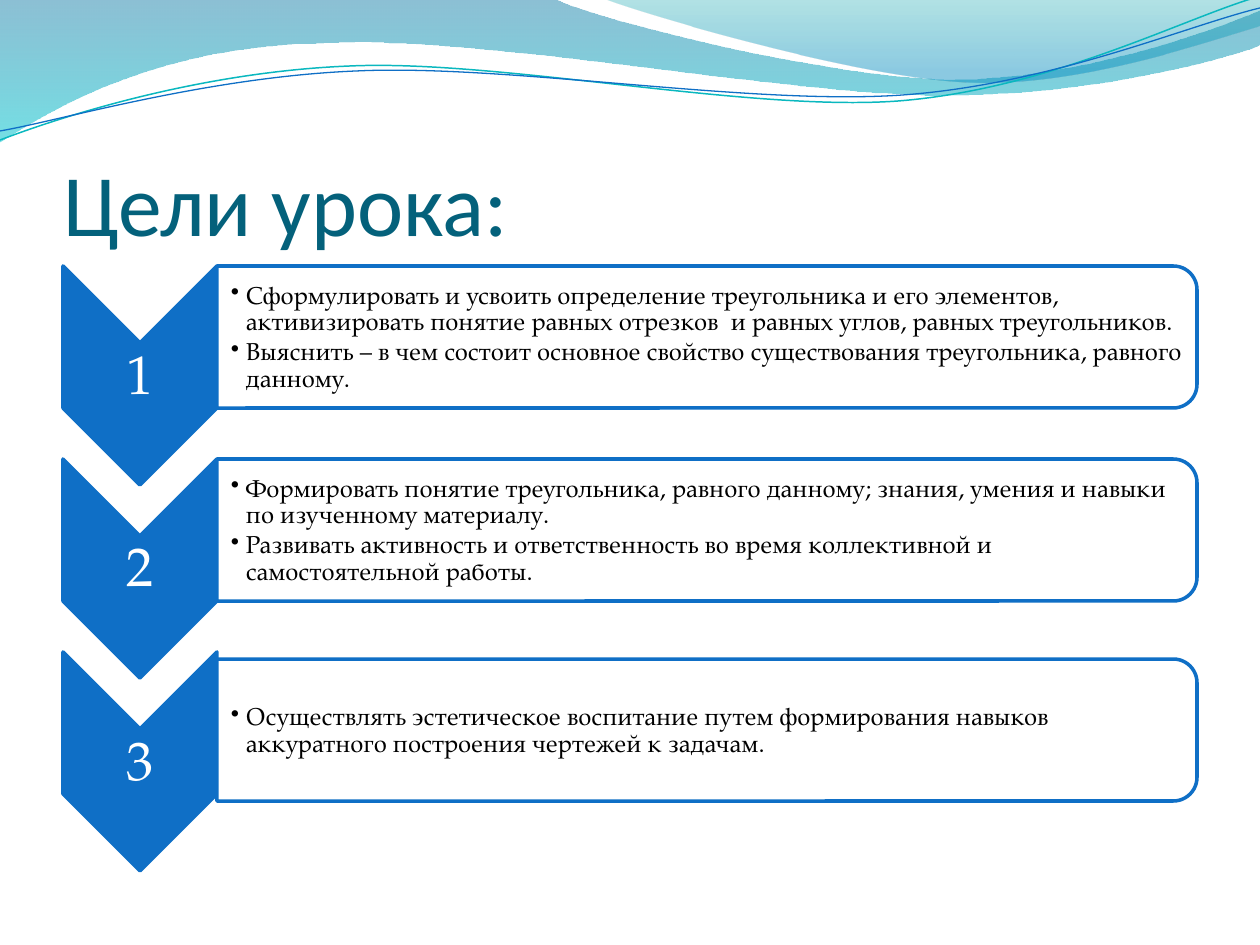
from lxml import etree
from pptx import Presentation
from pptx.dml.color import RGBColor
from pptx.enum.shapes import MSO_SHAPE
from pptx.enum.text import MSO_ANCHOR, PP_ALIGN
from pptx.oxml.ns import qn
from pptx.util import Pt

PX = 914400 / 126
CHEVRON = MSO_SHAPE.CHEVRON
PANEL = MSO_SHAPE.ROUND_2_SAME_RECTANGLE
MIDDLE, BOTTOM = MSO_ANCHOR.MIDDLE, MSO_ANCHOR.BOTTOM
LEFT, CENTER = PP_ALIGN.LEFT, PP_ALIGN.CENTER
TITLE_FONT, BODY_FONT = "Calibri", "TeX Gyre Pagella"
COLORS = {
    "title": "04617B", "accent": "0F6FC6", "teal": "0AB8BF",
    "white": "FFFFFF", "black": "000000",
    "wave_top": "0074A1", "wave_bottom": "00C6CF",
    "corner_top": "00A1A9", "corner_bottom": "008BBF",
}

# An outline is a list of parts: two numbers make a line, six a Bézier curve.
LEFT_WAVE = [
    (0, 0), (554, -1), (600, 21, 837, 79, 955, 79),
    (1075, 79, 1207, 33, 1260, 11), (1261, 45),
    (1239, 55, 1096, 96, 940, 95), (784, 95, 481, 35, 324, 43),
    (163, 45, 58, 105, -1, 142),
]
CORNER_WAVE = [
    (604, -1), (641, 14, 859, 78, 969, 82),
    (1079, 87, 1211, 40, 1260, 26), (1260, 0),
]
TEAL_LINE = [
    (0, 140), (60, 117, 199, 72, 349, 66),
    (498, 59, 747, 112, 898, 101), (1050, 89, 1182, 19, 1257, -3),
]
BLUE_LINE = [
    (0, 131), (59, 121, 207, 77, 357, 71),
    (508, 64, 752, 106, 903, 95), (1053, 84, 1186, 26, 1260, 8),
]

# Number, distance of the panel below the chevron's top, goals
STEPS = [
    ("1", 0, [
        "Сформулировать и усвоить определение треугольника и его элементов, "
        "активизировать понятие равных отрезков  и равных углов, равных треугольников.",
        "Выяснить – в чем состоит основное свойство существования треугольника, "
        "равного данному.",
    ]),
    ("2", 0, [
        "Формировать понятие треугольника, равного данному; знания, умения и навыки "
        "по изученному материалу.",
        "Развивать активность и ответственность во время коллективной и "
        "самостоятельной работы.",
    ]),
    ("3", 7, [
        "Осуществлять эстетическое воспитание путем формирования навыков "
        "аккуратного построения чертежей к задачам.",
    ]),
]


def px(length):
    return round(length * PX)


def rgb(name):
    return RGBColor.from_string(COLORS[name])


def add_outline(slide, outline, close):
    """Draw all points as lines, then merge each curve's three lines into one curve."""
    start, *parts = outline
    points = [(px(x), px(y)) for part in parts for x, y in zip(part[::2], part[1::2])]
    builder = slide.shapes.build_freeform(*map(px, start))
    builder.add_line_segments(points, close=close)
    shape = builder.convert_to_shape()
    shape.shadow.inherit = False

    segments = iter(list(shape.element.iter(qn("a:lnTo"))))
    for part in parts:
        segment = next(segments)
        if len(part) == 6:
            curve = etree.Element(qn("a:cubicBezTo"))
            segment.addprevious(curve)
            for line in (segment, next(segments), next(segments)):
                curve.append(line[0])
                line.getparent().remove(line)
    return shape


def add_wave(slide, outline, stops):
    """Fill the outline from top to bottom; a stop is (position, colour, opacity %)."""
    wave = add_outline(slide, outline, True)
    wave.line.fill.background()
    wave.fill.gradient()
    wave.fill.gradient_angle = 270
    for stop, (position, color, _) in zip(wave.fill.gradient_stops, stops):
        stop.position = position
        stop.color.rgb = rgb(color)
    for node, (_, _, opacity) in zip(wave.element.iter(qn("a:srgbClr")), stops):
        etree.SubElement(node, qn("a:alpha"), val=str(opacity * 1000))


def add_wave_line(slide, outline, color, width):
    curve = add_outline(slide, outline, False)
    curve.fill.background()
    curve.line.color.rgb = rgb(color)
    curve.line.width = Pt(width)


def add_header(slide):
    add_wave(slide, LEFT_WAVE, [(0, "wave_top", 45), (1, "wave_bottom", 55)])
    add_wave(slide, CORNER_WAVE, [(0, "corner_top", 30), (0.8, "corner_bottom", 45)])
    add_wave_line(slide, TEAL_LINE, "teal", 0.85)
    add_wave_line(slide, BLUE_LINE, "accent", 0.75)


def set_frame(frame, anchor, insets):
    frame.word_wrap = True
    frame.vertical_anchor = anchor
    (frame.margin_left, frame.margin_top,
     frame.margin_right, frame.margin_bottom) = map(px, insets)


def format_runs(paragraph, font, size, color):
    for run in paragraph.runs:
        run.font.name = font
        run.font.size = Pt(size)
        run.font.color.rgb = rgb(color)


def set_title(slide, text, left, top, width, height):
    title = slide.shapes.title
    title.left, title.top, title.width, title.height = map(px, (left, top, width, height))
    set_frame(title.text_frame, BOTTOM, (0, 6, 0, 0))
    title.text_frame.text = text
    heading = title.text_frame.paragraphs[0]
    heading.alignment = LEFT
    format_runs(heading, TITLE_FONT, 50, "title")


def add_turned_shape(slide, preset, left, top, width, height, fill):
    """Add a preset turned by 90° that covers the given box."""
    shift = (width - height) / 2
    shape = slide.shapes.add_shape(
        preset, px(left + shift), px(top - shift), px(height), px(width))
    shape.rotation = 90
    shape.shadow.inherit = False
    shape.fill.solid()
    shape.fill.fore_color.rgb = rgb(fill)
    shape.line.color.rgb = rgb("accent")
    shape.line.width = Pt(2)


def add_text(slide, lines, left, top, width, height, insets):
    box = slide.shapes.add_textbox(px(left), px(top), px(width), px(height))
    set_frame(box.text_frame, MIDDLE, insets)
    box.text_frame.text = "\n".join(lines)
    for paragraph in box.text_frame.paragraphs:
        paragraph.line_spacing = 0.9
    return box.text_frame.paragraphs


def make_bullet(paragraph, indent, percent_after):
    paragraph.level = 1
    properties = paragraph._p.get_or_add_pPr()
    properties.set("marL", str(px(indent)))
    properties.set("indent", str(-px(indent)))
    spacing = etree.SubElement(properties, qn("a:spcAft"))
    etree.SubElement(spacing, qn("a:spcPct"), val=str(percent_after * 1000))
    etree.SubElement(properties, qn("a:buChar"), char="••")


def add_step(slide, number, panel_drop, goals, left, top, width):
    chevron_width, panel_top = 154, top + panel_drop
    add_turned_shape(slide, CHEVRON, left, top, chevron_width, 219, "accent")
    label, = add_text(slide, [number], left, top + 78, chevron_width, 65, (3, 3, 3, 3))
    label.alignment = CENTER
    format_runs(label, BODY_FONT, 31, "white")

    panel_left, panel_width = left + chevron_width, width - chevron_width
    add_turned_shape(slide, PANEL, panel_left, panel_top, panel_width, 142, "white")
    for goal in add_text(slide, goals, panel_left, panel_top + 8,
                         panel_width - 6, 128, (14, 1, 1, 1)):
        make_bullet(goal, 15, 15)
        format_runs(goal, BODY_FONT, 14, "black")


def main():
    presentation = Presentation()
    presentation.slide_width, presentation.slide_height = px(1260), px(945)
    slide = presentation.slides.add_slide(presentation.slide_layouts[5])
    add_header(slide)
    set_title(slide, "Цели урока:", 63, 97, 1134, 157)
    for row, (number, panel_drop, goals) in enumerate(STEPS):
        add_step(slide, number, panel_drop, goals, 63, 266 + 193 * row, 1134)
    presentation.save("out.pptx")


if __name__ == "__main__":
    main()
